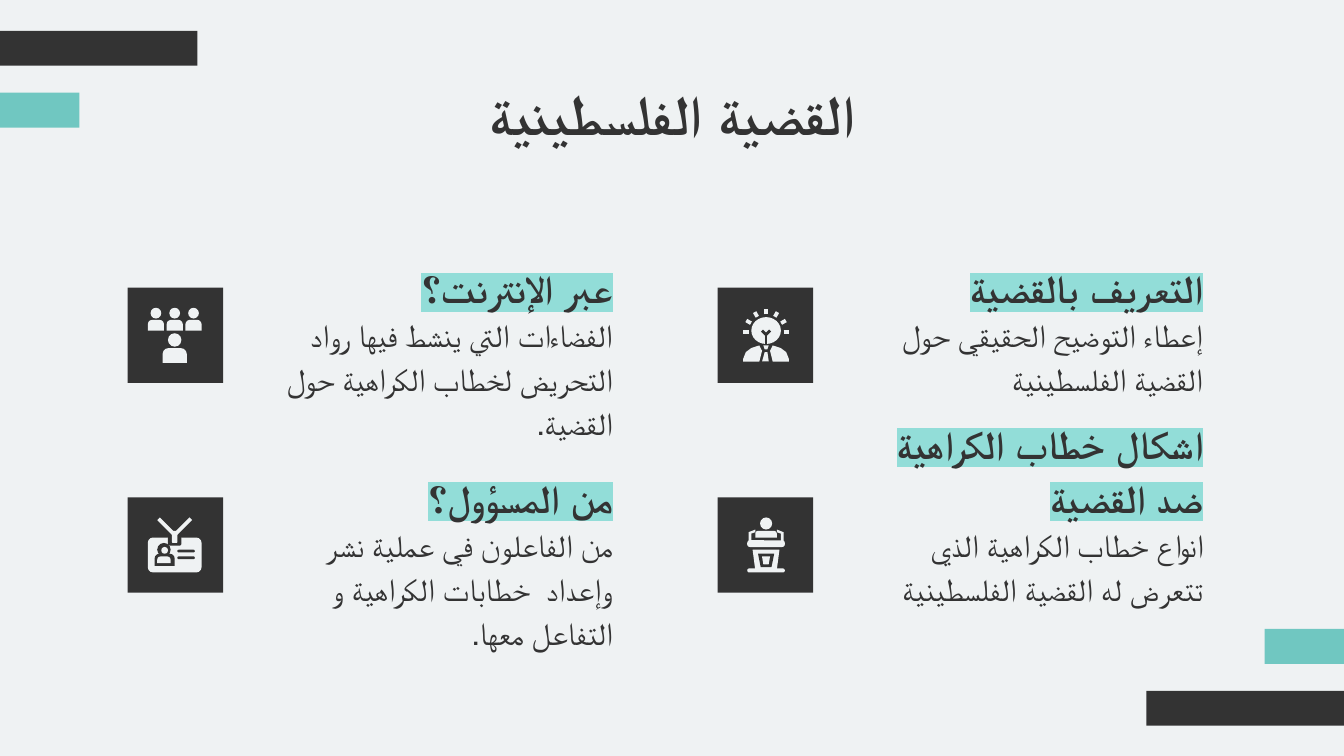
"""Build the four-topic slide on the Palestinian cause."""
import math
from dataclasses import dataclass
from typing import Union

from lxml import etree
from pptx import Presentation
from pptx import util as u
from pptx.dml import color as dml
from pptx.enum import shapes, text
from pptx.oxml import ns

DARK, TEAL, MINT, PALE = "333333", "70C7C1", "92DDD8", "EFF2F3"
OVAL = shapes.MSO_SHAPE.OVAL
RECTANGLE = shapes.MSO_SHAPE.RECTANGLE
ROUNDED = shapes.MSO_SHAPE.ROUNDED_RECTANGLE
SHOULDERS = shapes.MSO_SHAPE.ROUND_2_SAME_RECTANGLE
TILE = 0.71
AXIS = 0.36
Point = tuple[float, float]


@dataclass
class Preset:
    kind: shapes.MSO_SHAPE
    left: float
    top: float
    width: float
    height: float
    color: str = PALE
    rounding: float | None = None


@dataclass
class Outline:
    points: list[Point]
    color: str = PALE


@dataclass
class Stroke:
    start: Point
    end: Point
    color: str = PALE
    weight: float = 2


Piece = Union[Preset, Outline, Stroke]


@dataclass
class Topic:
    column: int
    row: int
    heading: str
    body: str
    icon: list[Piece]


def rgb(value: str) -> dml.RGBColor:
    return dml.RGBColor.from_string(value)


def paint(shape, color: str) -> None:
    shape.shadow.inherit = False
    shape.fill.solid()
    shape.fill.fore_color.rgb = rgb(color)
    shape.line.fill.background()


def draw_piece(target, piece: Piece, left: float = 0, top: float = 0) -> None:
    def place(point: Point) -> tuple[u.Length, u.Length]:
        return u.Inches(left + point[0]), u.Inches(top + point[1])

    if isinstance(piece, Preset):
        shape = target.add_shape(piece.kind, *place((piece.left, piece.top)),
                                 u.Inches(piece.width), u.Inches(piece.height))
        if piece.rounding is not None:
            shape.adjustments[0] = piece.rounding
        paint(shape, piece.color)
    elif isinstance(piece, Outline):
        first, *rest = map(place, piece.points)
        builder = target.build_freeform(*first)
        builder.add_line_segments(rest, close=True)
        paint(builder.convert_to_shape(), piece.color)
    else:
        line = target.add_connector(shapes.MSO_CONNECTOR.STRAIGHT,
                                    *place(piece.start), *place(piece.end))
        line.line.color.rgb = rgb(piece.color)
        line.line.width = u.Pt(piece.weight)
        etree.SubElement(line._element.spPr, ns.qn("a:effectLst"))


def mirrored(points: list[Point]) -> list[Piece]:
    return [Outline(points), Outline([(2 * AXIS - x, y) for x, y in points])]


def person(center: float, top: float, head: float, width: float, height: float) -> list[Piece]:
    return [Preset(OVAL, center - head / 2, top, head, head),
            Preset(SHOULDERS, center - width / 2, top + head + 0.01, width, height, rounding=0.4)]


def audience_icon() -> list[Piece]:
    row = [piece for column in range(3)
           for piece in person(0.21 + 0.14 * column, 0.15, 0.08, 0.12, 0.08)]
    return row + person(0.35, 0.34, 0.1, 0.18, 0.11)


def idea_icon() -> list[Piece]:
    middle = 0.33
    rays = []
    for angle in range(180, 361, 30):
        x, y = math.cos(math.radians(angle)), math.sin(math.radians(angle))
        rays.append(Stroke((AXIS + 0.13 * x, middle + 0.13 * y),
                           (AXIS + 0.17 * x, middle + 0.17 * y)))
    filament = [Stroke((AXIS, 0.35), end, DARK, 1.5)
                for end in [(AXIS, 0.42), (0.33, 0.32), (0.39, 0.32)]]
    jacket = [(0.31, 0.43), (0.25, 0.45), (0.21, 0.48), (0.19, 0.53),
              (0.19, 0.55), (0.31, 0.55), (0.33, 0.47)]
    tie = [Outline([(0.34, 0.43), (0.35, 0.46), (0.37, 0.46), (0.38, 0.43)]),
           Outline([(0.35, 0.48), (0.33, 0.55), (0.38, 0.55), (0.37, 0.48)])]
    return rays + [Preset(OVAL, 0.25, 0.22, 0.22, 0.2)] + filament + mirrored(jacket) + tie


def badge_icon() -> list[Piece]:
    return [
        Preset(ROUNDED, 0.15, 0.3, 0.4, 0.26, rounding=0.15),
        Preset(SHOULDERS, 0.2, 0.42, 0.15, 0.09, DARK, 0.4),
        Preset(OVAL, 0.22, 0.34, 0.1, 0.1, DARK),
        Preset(SHOULDERS, 0.22, 0.44, 0.1, 0.05, PALE, 0.5),
        Preset(OVAL, 0.25, 0.37, 0.05, 0.05),
        *[Preset(ROUNDED, 0.37, top, 0.13, 0.02, DARK, 0.5) for top in (0.39, 0.44)],
        Preset(ROUNDED, 0.3, 0.29, 0.1, 0.07, DARK, 0.2),
        Preset(ROUNDED, 0.33, 0.25, 0.04, 0.09, PALE, 0.2),
        *[Stroke((x, 0.16), (0.35, 0.28)) for x in (0.23, 0.47)],
    ]


def podium_icon() -> list[Piece]:
    arm = [(0.28, 0.24), (0.23, 0.26), (0.23, 0.33), (0.25, 0.33), (0.25, 0.27), (0.28, 0.26)]
    return person(AXIS, 0.15, 0.09, 0.16, 0.05) + mirrored(arm) + [
        Preset(ROUNDED, 0.22, 0.32, 0.28, 0.05, rounding=0.4),
        Outline([(0.26, 0.39), (0.46, 0.39), (0.44, 0.54), (0.28, 0.54)]),
        Outline([(0.3, 0.42), (0.42, 0.42), (0.4, 0.52), (0.32, 0.52)], DARK),
        Outline([(0.33, 0.44), (0.39, 0.44), (0.38, 0.5), (0.34, 0.5)]),
        Preset(ROUNDED, 0.22, 0.53, 0.28, 0.03, rounding=0.5),
    ]


def write(shape, content: str, size: float, font_name: str, bold: bool,
          alignment: text.PP_ALIGN, anchor: text.MSO_ANCHOR) -> None:
    frame = shape.text_frame
    frame.word_wrap = True
    frame.auto_size = text.MSO_AUTO_SIZE.NONE
    frame.vertical_anchor = anchor
    frame.margin_left = frame.margin_right = u.Inches(0.1)
    frame.margin_top = frame.margin_bottom = u.Inches(0.1)
    frame.text = content
    paragraph = frame.paragraphs[0]
    paragraph.alignment = alignment
    paragraph._p.get_or_add_pPr().set("rtl", "1")
    font = paragraph.font
    font.size, font.bold, font.name = u.Pt(size), bold, font_name
    font.color.rgb = rgb(DARK)


def draw_topic(slide, topic: Topic) -> None:
    left, top = 0.95 + 4.39 * topic.column, 1.84 + 1.56 * topic.row
    right, anchors = text.PP_ALIGN.RIGHT, text.MSO_ANCHOR
    text_left, width = u.Inches(left + 0.96), u.Inches(2.75)
    body = slide.shapes.add_textbox(text_left, u.Inches(top + 0.37), width, u.Inches(0.95))
    write(body, topic.body, 17, "Manrope", False, right, anchors.TOP)
    heading = slide.shapes.add_textbox(text_left, u.Inches(top), width, u.Inches(0.58))
    write(heading, topic.heading, 21, "Lato", True, right, anchors.BOTTOM)
    for box in (body, heading):
        box.text_frame.paragraphs[0].line_spacing = 1.15
    run = heading.text_frame.paragraphs[0].runs[0]
    highlight = etree.SubElement(run._r.get_or_add_rPr(), ns.qn("a:highlight"))
    etree.SubElement(highlight, ns.qn("a:srgbClr"), val=MINT)
    draw_piece(slide.shapes, Preset(RECTANGLE, left, top + 0.3, TILE, TILE, DARK))
    group = slide.shapes.add_group_shape()
    for piece in topic.icon:
        draw_piece(group.shapes, piece, left, top + 0.3)


def main() -> None:
    presentation = Presentation()
    presentation.slide_width = u.Inches(10)
    presentation.slide_height = presentation.slide_width * 9 // 16
    slide = presentation.slides.add_slide(presentation.slide_layouts[5])
    slide.background.fill.solid()
    slide.background.fill.fore_color.rgb = rgb(PALE)
    for left, top, width, color in [(8.53, 5.14, 1.47, DARK), (9.41, 4.68, 0.59, TEAL),
                                    (0, 0.23, 1.47, DARK), (0, 0.69, 0.59, TEAL)]:
        draw_piece(slide.shapes, Preset(RECTANGLE, left, top, width, 0.26, color))
    title = slide.shapes.title
    title.left, title.top, title.width, title.height = map(u.Inches, (0.79, 0.49, 8.43, 0.63))
    write(title, "القضية الفلسطينية", 30, "Lato", True, text.PP_ALIGN.CENTER, text.MSO_ANCHOR.TOP)
    for topic in [
        Topic(0, 0, "عبر الإنترنت؟",
              "الفضاءات التي ينشط فيها رواد التحريض لخطاب الكراهية حول القضية.", audience_icon()),
        Topic(1, 0, "التعريف بالقضية", "إعطاء التوضيح الحقيقي حول القضية الفلسطينية", idea_icon()),
        Topic(0, 1, "من المسؤول؟",
              "من الفاعلون في عملية نشر وإعداد  خطابات الكراهية و التفاعل معها.", badge_icon()),
        Topic(1, 1, "اشكال خطاب الكراهية ضد القضية",
              "انواع خطاب الكراهية الذي تتعرض له القضية الفلسطينية", podium_icon()),
    ]:
        draw_topic(slide, topic)
    presentation.save("out.pptx")


if __name__ == "__main__":
    main()
